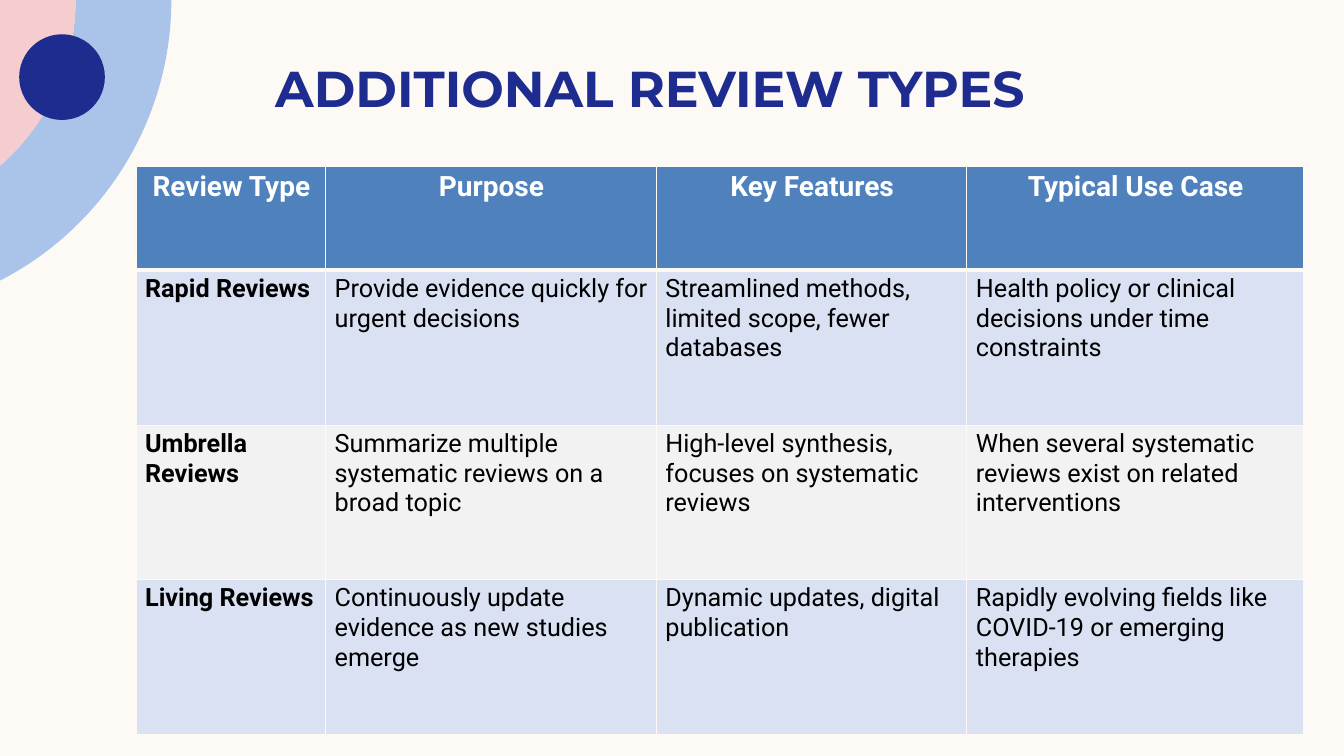
import math

from lxml import etree
from pptx import Presentation
from pptx.dml.color import RGBColor
from pptx.enum import shapes, text
from pptx.oxml.ns import qn
from pptx.util import Inches, Pt

TITLE = "ADDITIONAL REVIEW TYPES"
ROWS = [
    ("Review Type", "Purpose", "Key Features", "Typical Use Case"),
    ("Rapid Reviews",
     "Provide evidence quickly for urgent decisions",
     "Streamlined methods, limited scope, fewer databases",
     "Health policy or clinical decisions under time constraints"),
    ("Umbrella Reviews",
     "Summarize multiple systematic reviews on a broad topic",
     "High-level synthesis, focuses on systematic reviews",
     "When several systematic reviews exist on related interventions"),
    ("Living Reviews",
     "Continuously update evidence as new studies emerge",
     "Dynamic updates, digital publication",
     "Rapidly evolving fields like COVID-19 or emerging therapies"),
]
COL_WIDTHS = [1.88, 3.28, 3.08, 3.34]
ROW_HEIGHTS = [1.03, 1.54, 1.53, 1.54]

CREAM, NAVY, BLUE, PINK = "FDFAF6", "1F2C8F", "AAC3E8", "F5CDCE"
HEADER, BAND, PLAIN = "4F81BD", "D9E1F2", "F2F2F2"
RING_X = -1.43  # centre of both rings, on the slide's top edge
OUTER_R, INNER_R = 3.13, 2.18


def color(hex_code):
    return RGBColor.from_string(hex_code)


def paint(sp, fill):
    sp.shadow.inherit = False
    sp.fill.solid()
    sp.fill.fore_color.rgb = color(fill)
    sp.line.fill.background()


def arc(radius):
    """Four Bezier points from the slide's top edge round to its left edge."""
    end = math.acos(-RING_X / radius)
    k = 4 / 3 * math.tan(end / 4)
    cos, sin = math.cos(end), math.sin(end)
    unit = [(1, 0), (1, k), (cos + k * sin, sin - k * cos), (cos, sin)]
    return [(RING_X + radius * x, radius * y) for x, y in unit]


def add_outline(s, points, curve_starts, fill):
    """Draw points; each curve start is the index of a curve's first control point."""
    pts = [(Inches(x), Inches(y)) for x, y in points]
    builder = s.shapes.build_freeform(*pts[0])
    builder.add_line_segments(pts[1:], close=True)
    sp = builder.convert_to_shape()
    lines = list(sp._element.iter(qn("a:lnTo")))
    for start in curve_starts:
        curve = etree.Element(qn("a:cubicBezTo"))
        lines[start - 1].addprevious(curve)
        for line in lines[start - 1:start + 2]:
            curve.append(line[0])
            line.getparent().remove(line)
    paint(sp, fill)


def add_run(p, words, font, size, fill, bold):
    r = p.add_run()
    r.text = words
    r.font.name, r.font.size, r.font.bold = font, Pt(size), bold
    r.font.color.rgb = color(fill)


def add_borders(cell, fill, bottom_width):
    tcPr = cell._tc.get_or_add_tcPr()
    widths = {"lnL": 1, "lnR": 1, "lnT": 1, "lnB": bottom_width}
    for i, (side, width) in enumerate(widths.items()):
        ln = etree.Element(qn("a:" + side), w=str(Pt(width)))
        solid = etree.SubElement(ln, qn("a:solidFill"))
        etree.SubElement(solid, qn("a:srgbClr"), val=fill)
        tcPr.insert(i, ln)


def add_title(s):
    sp = s.shapes.title
    sp.left, sp.top, sp.width, sp.height = map(Inches, (2.63, 0.1, 10.8, 1.07))
    tf = sp.text_frame
    tf.auto_size = text.MSO_AUTO_SIZE.NONE
    tf.vertical_anchor = text.MSO_ANCHOR.BOTTOM
    tf.margin_left = tf.margin_right = Inches(0.1)
    tf.margin_top = tf.margin_bottom = 0
    p = tf.paragraphs[0]
    p.alignment = text.PP_ALIGN.LEFT
    p.space_after = Pt(6)
    add_run(p, TITLE, "Montserrat", 36, NAVY, True)


def add_review_table(s):
    table = s.shapes.add_table(
        len(ROWS), len(COL_WIDTHS), Inches(1.35), Inches(1.65),
        Inches(sum(COL_WIDTHS)), Inches(sum(ROW_HEIGHTS))).table
    for col, width in zip(table.columns, COL_WIDTHS):
        col.width = Inches(width)
    for row, height in zip(table.rows, ROW_HEIGHTS):
        row.height = Inches(height)
    for i, row in enumerate(ROWS):
        is_header = i == 0
        fill = HEADER if is_header else BAND if i % 2 else PLAIN
        for j, words in enumerate(row):
            cell = table.cell(i, j)
            cell.margin_left, cell.margin_right = Inches(0.09), Inches(0.08)
            cell.margin_top = cell.margin_bottom = Inches(0.04)
            cell.fill.solid()
            cell.fill.fore_color.rgb = color(fill)
            add_borders(cell, CREAM, 3 if is_header else 1)
            p = cell.text_frame.paragraphs[0]
            if is_header:
                p.alignment = text.PP_ALIGN.CENTER
                add_run(p, words, "Roboto", 20, "FFFFFF", True)
            else:
                add_run(p, words, "Roboto", 18, "000000", j == 0)


def main():
    prs = Presentation()
    prs.slide_width, prs.slide_height = Inches(13.33), Inches(7.5)
    s = prs.slides.add_slide(prs.slide_layouts[5])
    s.background.fill.solid()
    s.background.fill.fore_color.rgb = color(CREAM)

    outer, inner = arc(OUTER_R), arc(INNER_R)
    add_outline(s, inner[:1] + outer + inner[::-1], [2, 6], BLUE)
    add_outline(s, [(0, 0)] + inner, [2], PINK)
    dot = s.shapes.add_shape(shapes.MSO_SHAPE.OVAL, Inches(0.19), Inches(0.34),
                             Inches(0.85), Inches(0.85))
    paint(dot, NAVY)

    add_title(s)
    add_review_table(s)
    prs.save("out.pptx")


if __name__ == "__main__":
    main()
